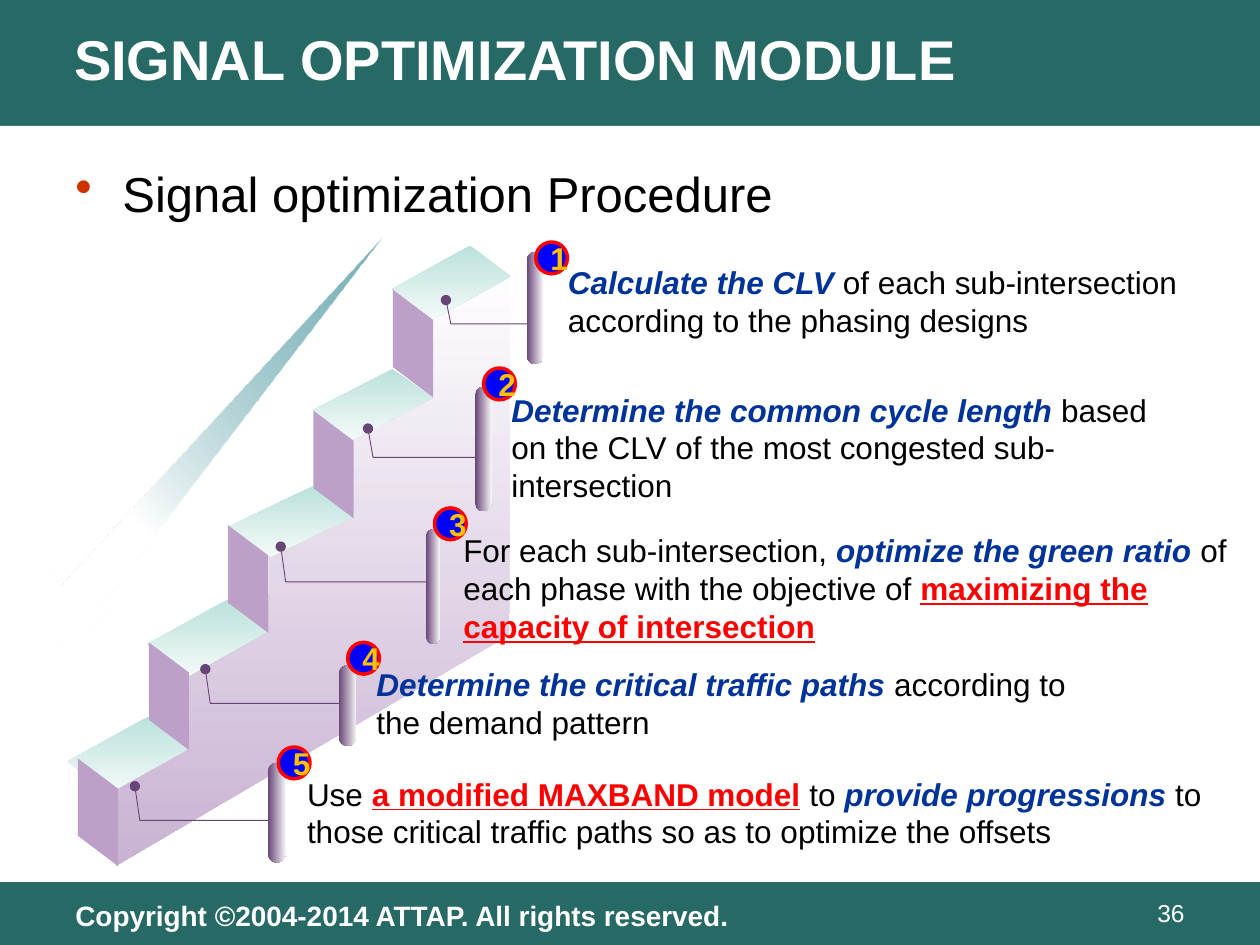
from lxml import etree
from pptx import Presentation
from pptx.dml.color import RGBColor
from pptx.enum.shapes import MSO_SHAPE
from pptx.enum.text import MSO_ANCHOR, PP_ALIGN
from pptx.oxml.ns import qn
from pptx.util import Cm, Pt

COLORS = {
    "teal": "266965", "white": "FFFFFF", "black": "000000", "blue": "003399",
    "red": "FF0000", "bullet": "CC3300", "badge": "0000FF", "digit": "FFC000",
    "riser": "BCA0C8", "tread_top": "BBE1DC", "tread_end": "F4FAF9",
    "wall_top": "FEFDFE", "wall_end": "C9B3D3", "plum": "684577",
    "bar_end": "F6F5F6", "arrow": "227F89",
}
PLAIN = {"color": "black"}
KEY = {"color": "blue", "bold": True, "italic": True}
GOAL = {"color": "red", "bold": True, "underline": True}

# One record per stair, top to bottom; lengths in cm
STEPS = [
    {"tread": (7.9, 4.95, 2.39, 1.52), "riser": (7.92, 5.84),
     "leader": (8.99, 6.05, 0.48, 10.95), "bar": (10.62, 5.08, 0.33, 2.26),
     "badge": (10.8, 4.88), "text": (11.2, 5.18, 13.77, 1.8),
     "runs": [("Calculate the CLV ", KEY),
              ("of each sub-intersection according to the phasing designs", PLAIN)]},
    {"tread": (6.32, 7.44, 2.41, 1.42), "riser": (6.32, 8.28),
     "leader": (7.42, 8.64, 0.58, 9.63), "bar": (9.58, 7.8, 0.33, 2.51),
     "badge": (9.75, 7.42), "text": (10.06, 7.75, 13.77, 2.57),
     "runs": [("Determine the common cycle length ", KEY),
              ("based on the CLV of the most congested sub-intersection", PLAIN)]},
    {"tread": (4.6, 9.8, 2.59, 1.42), "riser": (4.6, 10.59),
     "leader": (5.66, 11.02, 0.71, 8.74), "bar": (8.59, 10.67, 0.28, 2.31),
     "badge": (8.76, 10.24), "text": (9.09, 10.59, 16.59, 2.57),
     "runs": [("For each sub-intersection, ", PLAIN),
              ("optimize the green ratio ", KEY),
              ("of each phase with the objective of ", PLAIN),
              ("maximizing the capacity of intersection", GOAL)]},
    {"tread": (2.97, 12.09, 2.44, 1.55), "riser": (3, 12.95),
     "leader": (4.14, 13.49, 0.69, 7.16), "bar": (6.83, 13.41, 0.36, 1.63),
     "badge": (7.01, 12.95), "text": (7.34, 13.28, 15.04, 1.8),
     "runs": [("Determine the critical traffic paths ", KEY),
              ("according to the demand pattern", PLAIN)]},
    {"tread": (1.37, 14.45, 2.44, 1.55), "riser": (1.57, 15.29),
     "leader": (2.72, 15.85, 0.69, 5.72), "bar": (5.4, 15.38, 0.36, 2.01),
     "badge": (5.61, 15.06), "text": (5.94, 15.49, 18.85, 1.8),
     "runs": [("Use ", PLAIN), ("a modified MAXBAND model", GOAL), (" to ", PLAIN),
              ("provide progressions ", KEY),
              ("to those critical traffic paths so as to optimize the offsets", PLAIN)]},
]
WALL = [(0.03, 10.36), (1.42, 9.58), (1.45, 8), (3.07, 7.16), (3.1, 5.61), (4.7, 4.78),
        (4.7, 3.18), (6.32, 2.34), (6.32, 0.79), (7.95, 0), (7.92, 7.24), (0, 11.89)]
ARROW = [(6.71, 0), (1.04, 7.39), (1.24, 7.57), (0, 8.31), (0, 6.71), (0.23, 7.01)]
TREAD = [(0, 0.58), (0.33, 1), (1, 0.41), (0.66, 0)]  # shares of the tread's box
RISER = [(0, 0), (0.81, 0.61), (0.81, 2.17), (0, 1.56)]


def rgb(name):
    return RGBColor.from_string(COLORS[name])


def paint(shape, *fill, angle=0):
    """Fill with one colour, or with a gradient from the first to the second."""
    shape.shadow.inherit = False
    shape.line.fill.background()
    if len(fill) == 1:
        shape.fill.solid()
        shape.fill.fore_color.rgb = rgb(fill[0])
        return
    shape.fill.gradient()
    shape.fill.gradient_angle = angle
    for stop, color in zip(shape.fill.gradient_stops, fill):
        stop.color.rgb = rgb(color)


def outline(slide, left, top, points, close=True):
    spots = [(Cm(left + x), Cm(top + y)) for x, y in points]
    builder = slide.shapes.build_freeform(*spots[0])
    builder.add_line_segments(spots[1:], close=close)
    return builder.convert_to_shape()


def add_run(paragraph, text, size, color, bold=False, italic=False, underline=False):
    run = paragraph.add_run()
    run.text = text
    font = run.font
    font.name, font.size, font.color.rgb = "Arial", Pt(size), rgb(color)
    font.bold, font.italic, font.underline = bold, italic, underline


def add_text(slide, box, runs, size, align=PP_ALIGN.LEFT):
    frame = slide.shapes.add_textbox(*map(Cm, box)).text_frame
    frame.word_wrap = True
    paragraph = frame.paragraphs[0]
    paragraph.alignment = align
    for text, style in runs:
        add_run(paragraph, text, size, **style)
    return paragraph


def add_frame(slide, left, top, width, height):
    """Teal ground with a white panel, title and footer."""
    slide.background.fill.solid()
    slide.background.fill.fore_color.rgb = rgb("teal")
    panel = slide.shapes.add_shape(
        MSO_SHAPE.RECTANGLE, Cm(left), Cm(top + 2.54), Cm(width), Cm(height - 3.81))
    paint(panel, "white")

    title = slide.shapes.title
    title.left, title.top = Cm(left + 1.24), Cm(top + 0.23)
    title.width, title.height = Cm(width - 1.24), Cm(1.88)
    title.text_frame.vertical_anchor = MSO_ANCHOR.MIDDLE
    heading = title.text_frame.paragraphs[0]
    heading.alignment = PP_ALIGN.LEFT
    add_run(heading, "SIGNAL OPTIMIZATION MODULE", 32, "white", bold=True)

    footer = top + height - 1.07
    add_text(slide, (left + 1.27, footer, 16.71, 0.89),
             [("Copyright ©2004-2014 ATTAP. All rights reserved.",
               {"color": "white", "bold": True})], 16)
    add_text(slide, (left + width - 7.19, footer, 5.92, 0.89),
             [("36", {"color": "white"})], 14, PP_ALIGN.RIGHT)


def add_topic(slide, box):
    topic = add_text(slide, box, [("Signal optimization Procedure", PLAIN)], 28)
    props = topic._p.get_or_add_pPr()
    props.set("marL", str(Cm(0.95)))
    props.set("indent", str(-Cm(0.95)))
    color = etree.SubElement(props, qn("a:buClr"))
    etree.SubElement(color, qn("a:srgbClr"), val=COLORS["bullet"])
    etree.SubElement(props, qn("a:buChar"), char="•")


def add_stairs(slide, left, top):
    wall = outline(slide, left + 2.34, top + 5.56, WALL)
    paint(wall, "wall_top", "wall_end", angle=270)
    for step in reversed(STEPS):
        x, y, width, height = step["tread"]
        tread = outline(slide, left + x, top + y, [(u * width, v * height) for u, v in TREAD])
        paint(tread, "tread_top", "tread_end", angle=270)
        x, y = step["riser"]
        paint(outline(slide, left + x, top + y, RISER), "riser")


def add_arrow(slide, left, top):
    arrow = outline(slide, left, top, ARROW)
    paint(arrow, "arrow", "white", angle=225)
    arrow.fill.gradient_stops[1].position = 0.71
    first_color = arrow._element.spPr.find(".//" + qn("a:srgbClr"))
    etree.SubElement(first_color, qn("a:alpha"), val="60000")


def add_step(slide, left, top, number, step):
    # Leader from the tread to the bar
    x, y, drop, end = step["leader"]
    leader = outline(slide, left + x, top + y, [(0, 0), (0.1, drop), (end - x, drop)], close=False)
    leader.shadow.inherit = False
    leader.fill.background()
    leader.line.color.rgb = rgb("plum")
    leader.line.width = Pt(0.5)
    etree.SubElement(leader.line._get_or_add_ln(), qn("a:headEnd"), type="oval")

    # Bar and its text
    x, y, width, height = step["bar"]
    bar = slide.shapes.add_shape(
        MSO_SHAPE.ROUNDED_RECTANGLE, Cm(left + x), Cm(top + y), Cm(width), Cm(height))
    bar.adjustments[0] = 0.5
    paint(bar, "plum", "bar_end")
    x, y, width, height = step["text"]
    add_text(slide, (left + x, top + y, width, height), step["runs"], 18)

    # Numbered badge
    x, y = step["badge"]
    badge = slide.shapes.add_shape(
        MSO_SHAPE.OVAL, Cm(left + x), Cm(top + y), Cm(0.64), Cm(0.64))
    paint(badge, "badge")
    badge.line.color.rgb = rgb("red")
    badge.line.width = Pt(2)
    badge.text_frame.word_wrap = True
    badge.text_frame.vertical_anchor = MSO_ANCHOR.MIDDLE
    label = badge.text_frame.paragraphs[0]
    label.alignment = PP_ALIGN.CENTER
    add_run(label, str(number), 18, "digit", bold=True)


def main():
    deck = Presentation()
    deck.slide_width, deck.slide_height = Cm(25.4), Cm(19.05)
    slide = deck.slides.add_slide(deck.slide_layouts[5])
    add_frame(slide, 0, 0, 25.4, 19.05)
    add_stairs(slide, 0, 0)
    add_arrow(slide, 0.99, 4.8)
    for number, step in enumerate(STEPS, 1):
        add_step(slide, 0, 0, number, step)
    add_topic(slide, (1.27, 3.18, 22.86, 14.17))
    deck.save("out.pptx")


if __name__ == "__main__":
    main()
